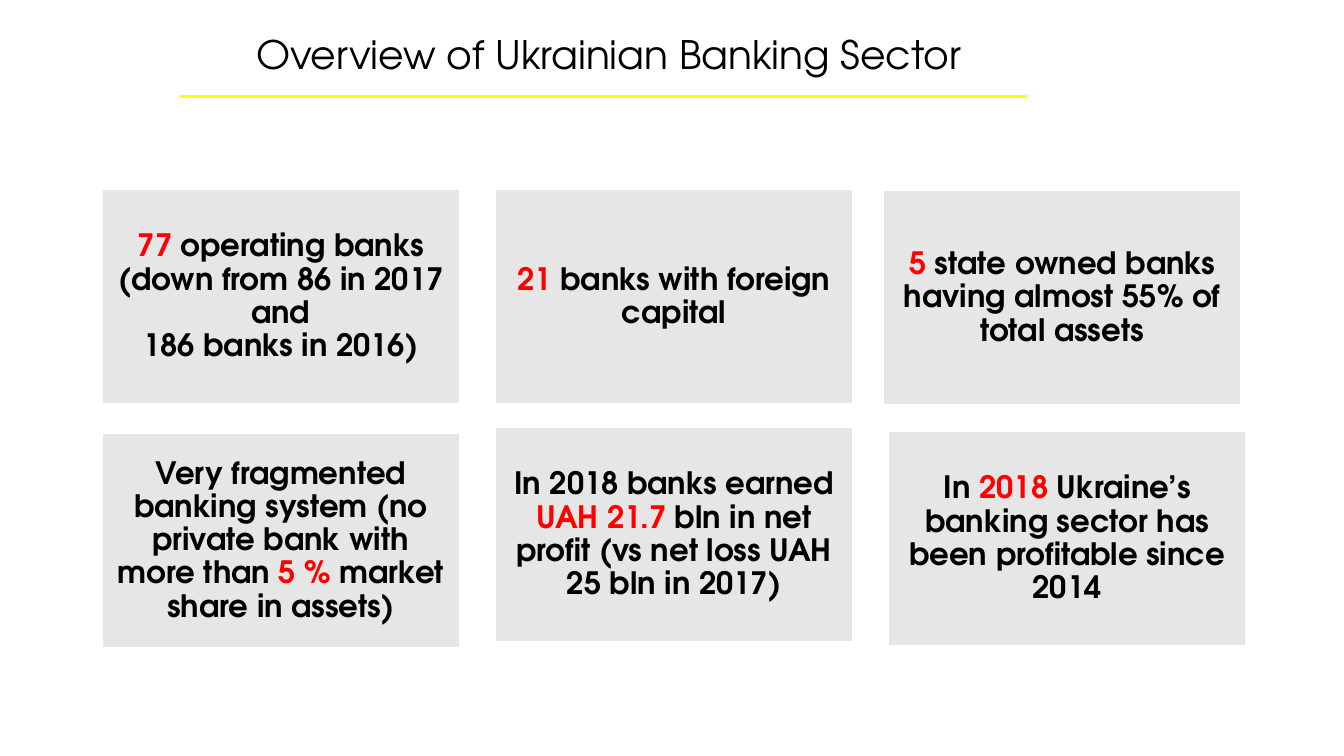
from dataclasses import dataclass

from lxml import etree
from pptx import Presentation
from pptx.dml.color import RGBColor
from pptx.enum.shapes import MSO_CONNECTOR as Connector, MSO_SHAPE as Shape
from pptx.enum.text import MSO_ANCHOR as Anchor, MSO_AUTO_SIZE as AutoSize, PP_ALIGN as Align
from pptx.oxml.ns import qn
from pptx.util import Inches, Pt


@dataclass(frozen=True)
class Theme:
    font: str = "TeX Gyre Adventor"
    title_size: int = 28
    card_size: int = 22
    ink: str = "000000"
    accent: str = "FF0000"
    rule: str = "FFFF00"
    card: str = "E7E6E6"
    edge: str = "FFFFFF"


THEME = Theme()
CARD_WIDTH, CARD_HEIGHT = 3.55, 2.13
BREAK = "\n"

CARDS = [
    (1.01, 1.88, [("77", True), (" operating banks (down from 86 in 2017 and", False),
                  (BREAK, False), ("186 banks in 2016)", False)]),
    (4.91, 1.88, [("21", True), (" banks with foreign capital", False)]),
    (8.76, 1.89, [("5", True), (" state owned banks having almost 55% of total assets", False)]),
    (1.01, 4.30, [("Very fragmented banking system (no private bank with more than ", False),
                  ("5 %", True), (" market share in assets)", False)]),
    (4.91, 4.24, [("In 2018 banks earned ", False), ("UAH 21.7 ", True),
                  ("bln in net profit (vs net loss UAH 25 bln in 2017)", False)]),
    (8.81, 4.28, [("In ", False), ("2018 ", True),
                  ("Ukraine’s banking sector has been profitable since 2014", False)]),
]


def color(value):
    return RGBColor.from_string(value)


def write_text(box, parts, *, size, align, bold=False, spacing=1.0, inset=(0.1, 0.05)):
    frame = box.text_frame
    frame.word_wrap = True
    frame.auto_size = AutoSize.NONE
    frame.vertical_anchor = Anchor.MIDDLE
    frame.margin_left = frame.margin_right = Inches(inset[0])
    frame.margin_top = frame.margin_bottom = Inches(inset[1])
    para = frame.paragraphs[0]
    para.alignment = align
    para.line_spacing = spacing
    para.space_before = Pt(0)
    for text, highlighted in parts:
        if text == BREAK:
            para.add_line_break()
            continue
        span = para.add_run()
        span.text = text
        span.font.name = THEME.font
        span.font.size = Pt(size)
        span.font.bold = bold
        span.font.color.rgb = color(THEME.accent if highlighted else THEME.ink)


def set_title(page, text):
    title = page.shapes.title
    title.left, title.top = Inches(2.44), Inches(0.18)
    title.width, title.height = Inches(8.04), Inches(0.71)
    write_text(title, [(text, False)], size=THEME.title_size, align=Align.LEFT)


def add_rule(page, left, right, top):
    rule = page.shapes.add_connector(
        Connector.STRAIGHT, Inches(left), Inches(top), Inches(right), Inches(top))
    rule.line.color.rgb = color(THEME.rule)
    rule.line.width = Pt(2.25)
    etree.SubElement(rule.element.spPr, qn("a:effectLst"))


def add_card(page, left, top, parts):
    card = page.shapes.add_shape(
        Shape.RECTANGLE, Inches(left), Inches(top), Inches(CARD_WIDTH), Inches(CARD_HEIGHT))
    card.shadow.inherit = False
    card.fill.solid()
    card.fill.fore_color.rgb = color(THEME.card)
    card.line.color.rgb = color(THEME.edge)
    card.line.width = Pt(1)
    write_text(card, parts, size=THEME.card_size, align=Align.CENTER,
               bold=True, spacing=0.9, inset=(0.09, 0.09))


def main():
    deck = Presentation()
    deck.slide_width, deck.slide_height = Inches(13.33), Inches(7.5)
    page = deck.slides.add_slide(deck.slide_layouts.get_by_name("Title Only"))
    add_rule(page, 1.79, 10.19, 0.96)
    set_title(page, "Overview of Ukrainian Banking Sector")
    for left, top, parts in CARDS:
        add_card(page, left, top, parts)
    deck.save("out.pptx")


if __name__ == "__main__":
    main()
